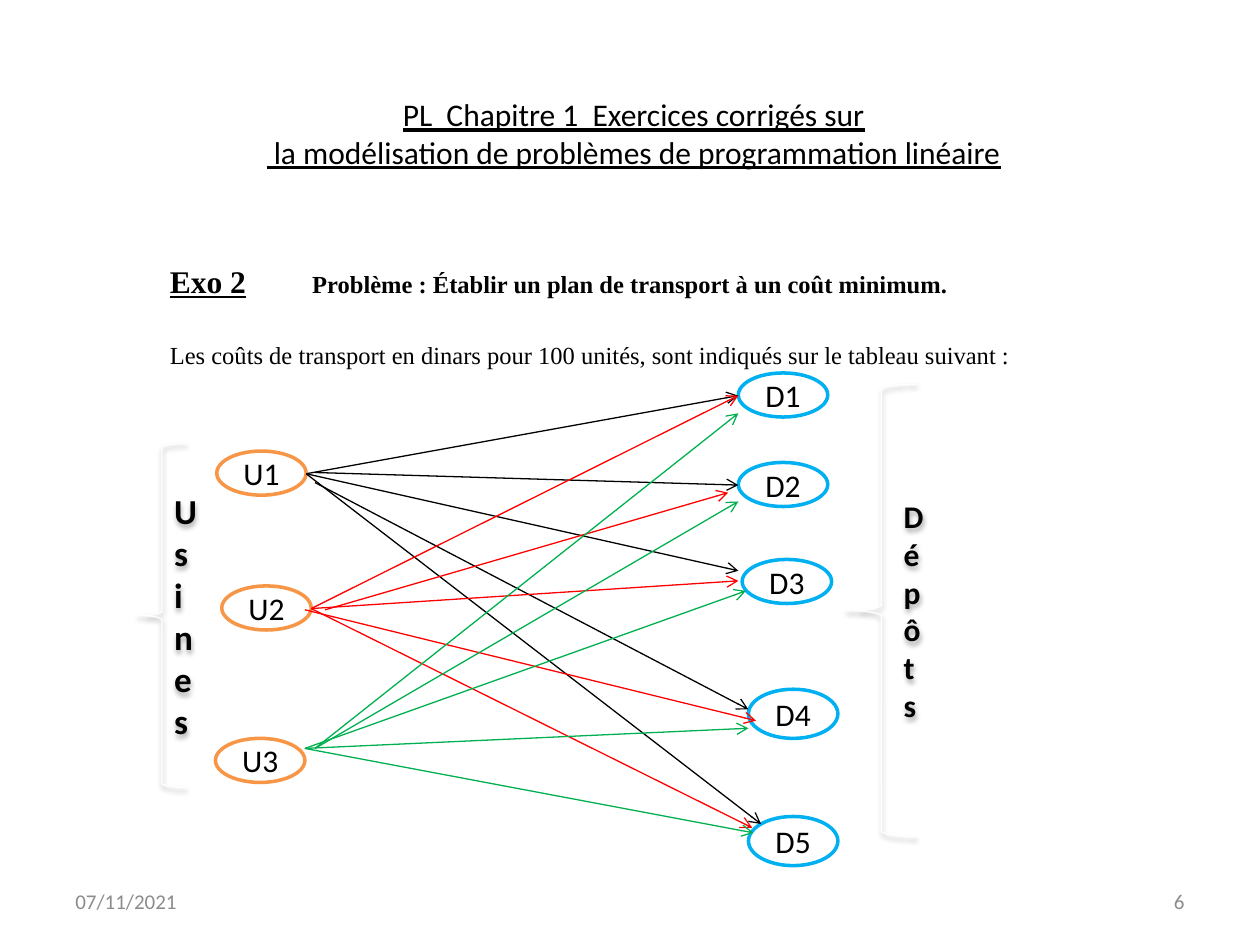
from dataclasses import dataclass

from lxml.etree import SubElement
from pptx import Presentation
from pptx.dml.color import RGBColor
from pptx.enum.shapes import MSO_CONNECTOR as Link, MSO_SHAPE as Preset
from pptx.enum.text import MSO_ANCHOR as Anchor, PP_ALIGN as Align
from pptx.oxml.ns import qn
from pptx.slide import Slide
from pptx.util import Inches, Pt

BLACK, WHITE, RED, GREEN = "000000", "FFFFFF", "FF0000", "00B050"
ORANGE, BLUE, GREY = "F79646", "00B0F0", "8C8C8C"
SERIF = {"name": "Times New Roman"}


def rgb(value):
    return RGBColor.from_string(value)


def apply(target, values):
    for key, value in values.items():
        setattr(target, key, value)


def cell(count):
    return Inches(round(count / 10, 3))


@dataclass
class Diagram:
    """Draws on a slide split into 100 columns and 75 rows."""

    slide: Slide
    font: str = "Calibri"
    size: int = 18
    margin: float = 0.75
    outline: float = 2

    def run(self, paragraph, words, color=BLACK, **style):
        run = paragraph.add_run()
        run.text = words
        apply(run.font, {"name": self.font, "size": Pt(self.size)} | style)
        run.font.color.rgb = rgb(color)

    def text(self, box, lines, anchor=Anchor.MIDDLE, align=Align.LEFT):
        frame = self.slide.shapes.add_textbox(*map(cell, box)).text_frame
        apply(frame, {"word_wrap": True, "vertical_anchor": anchor})
        for index, runs in enumerate(lines):
            paragraph = frame.add_paragraph() if index else frame.paragraphs[0]
            paragraph.alignment = align
            for words, style in runs:
                self.run(paragraph, words, **style)
        return frame.paragraphs

    def shape(self, preset, box, label, line, width, **style):
        shape = self.slide.shapes.add_shape(preset, *map(cell, box))
        shape.line.color.rgb = rgb(line)
        shape.line.width = Pt(width)
        frame = shape.text_frame
        apply(frame, {"word_wrap": True, "vertical_anchor": Anchor.MIDDLE})
        frame.paragraphs[0].alignment = Align.CENTER
        self.run(frame.paragraphs[0], label, **style)
        return shape

    def node(self, label, left, top, height, color):
        box = (left, top, 7.1, height)
        node = self.shape(Preset.OVAL, box, label, color, self.outline)
        node.shadow.inherit = False
        node.fill.solid()
        node.fill.fore_color.rgb = rgb(WHITE)
        apply(node.text_frame, {"margin_left": 0, "margin_right": 0})

    def brace(self, label, box, **style):
        """Keeps the theme shadow, which is what makes the white line visible."""
        brace = self.shape(Preset.LEFT_BRACE, box, label, WHITE, self.margin,
                           bold=True, **style)
        brace.fill.background()

    def arrow(self, start, end, color):
        ends = map(cell, (*start, *end))
        arrow = self.slide.shapes.add_connector(Link.STRAIGHT, *ends)
        arrow.line.color.rgb = rgb(color)
        arrow.line.width = Pt(0.75)
        SubElement(arrow.line._get_or_add_ln(), qn("a:tailEnd"), type="arrow")
        SubElement(arrow._element.spPr, qn("a:effectLst"))


FACTORIES = {"U1": (17.2, 35.8), "U2": (17.6, 46.5), "U3": (17.1, 58.6)}
DEPOTS = {
    "D1": (58.6, 29.6, 3.5),
    "D2": (58.6, 36.7, 3.5),
    "D3": (58.9, 44.4, 3.5),
    "D4": (59.4, 54.7, 3.9),
    "D5": (59.4, 64.8, 3.9),
}
ROUTES = {
    BLACK: [
        ((24.3, 37.6), (58.6, 31.4)),
        ((25, 37.5), (58.6, 38.5)),
        ((24.3, 37.6), (58.6, 45.3)),
        ((25, 38.3), (59.4, 56.3)),
        ((24.3, 37.6), (60.4, 65.4)),
    ],
    RED: [
        ((24.7, 48.3), (58.6, 31.4)),
        ((25.8, 48.4), (57.8, 39.1)),
        ((24.7, 48.3), (58.6, 46.1)),
        ((24.2, 48.4), (60, 57.2)),
        ((24.7, 48.3), (59.7, 65.7)),
    ],
    GREEN: [
        ((25, 59.4), (58.6, 32.8)),
        ((25, 59.4), (58.6, 39.8)),
        ((24.2, 59.4), (59.2, 46.9)),
        ((24.2, 59.4), (59.4, 57.8)),
        ((24.2, 59.4), (59.8, 66.1)),
    ],
}


def main():
    deck = Presentation()
    apply(deck, {"slide_width": Inches(10), "slide_height": Inches(7.5)})
    diagram = Diagram(deck.slides.add_slide(deck.slide_layouts[6]))

    title = diagram.text((7.8, 4.7, 85, 11.7), [[]], align=Align.CENTER)[0]
    diagram.run(title, "PL  Chapitre 1  Exercices corrigés sur", underline=True)
    title.add_line_break()
    diagram.run(title, " la modélisation de problèmes de programmation linéaire",
                underline=True)

    small = SERIF | {"size": Pt(14)}
    heading, costs = diagram.text((12.5, 20.3, 70, 50), [
        [("Exo 2", SERIF | {"bold": True, "underline": True}),
         ("\tProblème : Établir un plan de transport à un coût minimum.",
          small | {"bold": True})],
        [("Les coûts de transport en dinars pour 100 unités, sont indiqués "
          "sur le tableau suivant :", small)],
    ], anchor=Anchor.TOP)
    heading.space_before, costs.space_before = Pt(3.6), Pt(23)
    stops = SubElement(heading._p.get_or_add_pPr(), qn("a:tabLst"))
    SubElement(stops, qn("a:tab"), pos=str(cell(11.3)), algn="l")

    for label, place in FACTORIES.items():
        diagram.node(label, *place, 3.5, ORANGE)
    for label, place in DEPOTS.items():
        diagram.node(label, *place, BLUE)
    for color, routes in ROUTES.items():
        for start, end in routes:
            diagram.arrow(start, end, color)

    diagram.brace("Usines", (10.9, 35.2, 3.9, 27.3), size=Pt(20))
    diagram.brace("Dépôts", (67.2, 30.5, 5.5, 35.9))

    footer = {"size": Pt(12), "color": GREY}
    diagram.text((71.7, 69.5, 23.3, 4), [[("6", footer)]], align=Align.RIGHT)
    diagram.text((5, 69.5, 23.3, 4), [[("07/11/2021", footer)]])
    deck.save("out.pptx")


if __name__ == "__main__":
    main()
